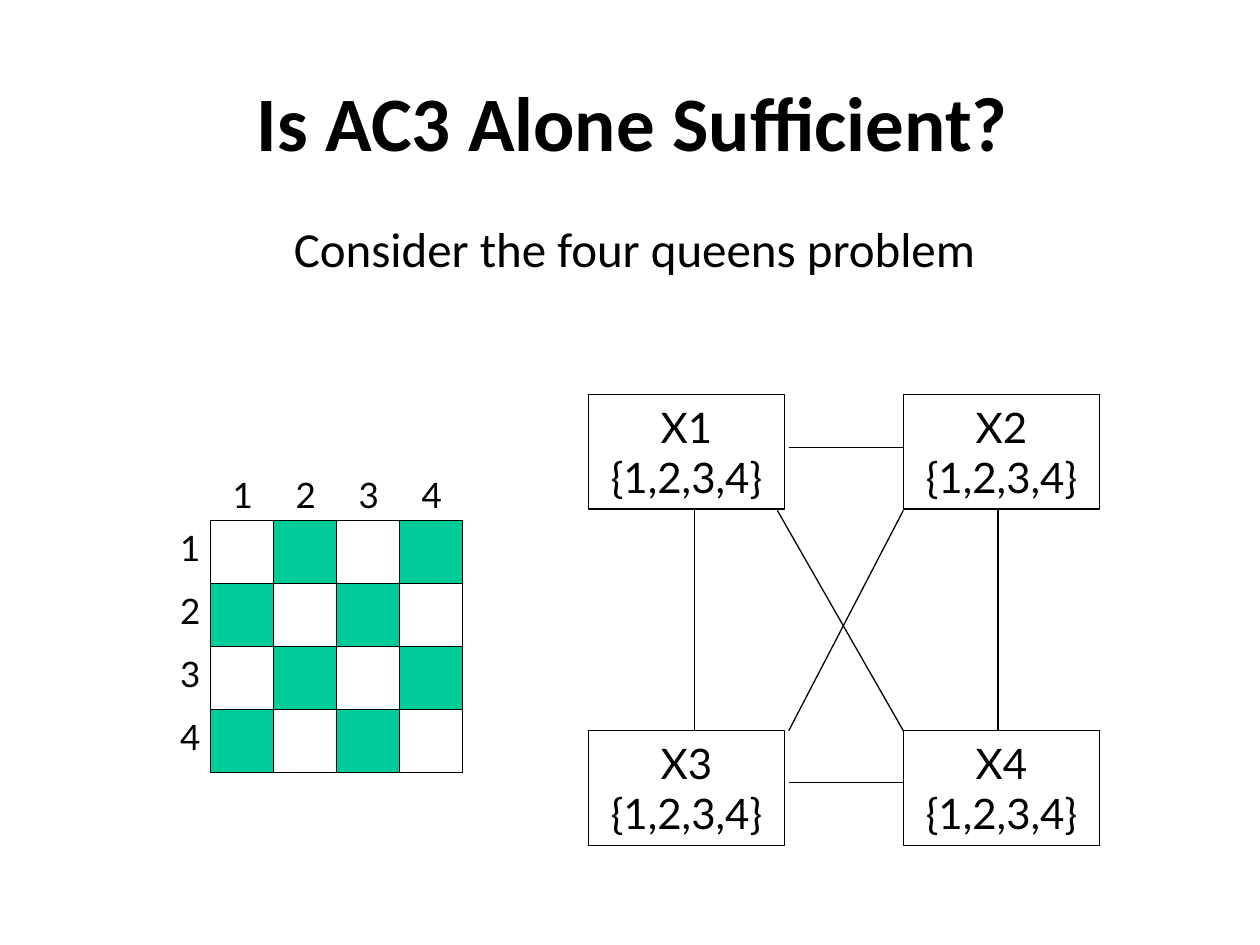
"""Build a slide on arc consistency and the four queens problem."""
from dataclasses import dataclass
from itertools import product

from lxml.etree import SubElement
from pptx import Presentation
from pptx.dml.color import RGBColor
from pptx.enum.shapes import MSO_CONNECTOR as Connector, MSO_SHAPE as Preset
from pptx.enum.text import MSO_ANCHOR as Anchor, MSO_AUTO_SIZE as AutoSize, PP_ALIGN as Align
from pptx.oxml.ns import qn
from pptx.util import Cm, Pt


@dataclass(frozen=True)
class Theme:
    ink: RGBColor = RGBColor(0, 0, 0)
    square: RGBColor = RGBColor(0x00, 0xCC, 0x99)
    heading_font: str = "Calibri"
    diagram_font: str = "Lato"
    title_size: Pt = Pt(44)
    subtitle_size: Pt = Pt(28)
    node_size: Pt = Pt(24)
    label_size: Pt = Pt(20)
    line_width: Pt = Pt(0.75)


THEME = Theme()


def write_lines(shape, lines, font, size, align=Align.CENTER, bold=False):
    frame = shape.text_frame
    for index, line in enumerate(lines):
        paragraph = frame.add_paragraph() if index else frame.paragraphs[0]
        paragraph.alignment = align
        run = paragraph.add_run()
        run.text = line
        run.font.name = font
        run.font.size = size
        run.font.bold = bold
        run.font.color.rgb = THEME.ink


def fit_to_text(shape):
    shape.text_frame.word_wrap = False
    shape.text_frame.auto_size = AutoSize.SHAPE_TO_FIT_TEXT


def add_title(slide, text):
    box = slide.shapes.add_textbox(Cm(1.96), Cm(0.84), Cm(21.59), Cm(3.18))
    box.text_frame.word_wrap = True
    box.text_frame.vertical_anchor = Anchor.MIDDLE
    write_lines(box, [text], THEME.heading_font, THEME.title_size, bold=True)


def add_subtitle(slide, text):
    box = slide.shapes.add_textbox(Cm(5.59), Cm(4.29), Cm(14.4), Cm(1.45))
    fit_to_text(box)
    write_lines(box, [text], THEME.heading_font, THEME.subtitle_size)


def add_box(group, left, top, width, height, color=None):
    shape = group.shapes.add_shape(Preset.RECTANGLE, Cm(left), Cm(top), Cm(width), Cm(height))
    shape.shadow.inherit = False
    if color is None:
        shape.fill.background()
    else:
        shape.fill.solid()
        shape.fill.fore_color.rgb = color
    shape.line.color.rgb = THEME.ink
    shape.line.width = THEME.line_width
    return shape


def add_label(group, left, top, text):
    box = group.shapes.add_textbox(Cm(left), Cm(top), Cm(0.89), Cm(1.09))
    fit_to_text(box)
    write_lines(box, [text], THEME.diagram_font, THEME.label_size, Align.LEFT)


def add_node(group, left, top, name):
    shape = add_box(group, left, top, 3.96, 2.31)
    fit_to_text(shape)
    write_lines(shape, [name, "{1,2,3,4}"], THEME.diagram_font, THEME.node_size)


def add_edge(group, start_x, start_y, end_x, end_y):
    edge = group.shapes.add_connector(
        Connector.STRAIGHT, Cm(start_x), Cm(start_y), Cm(end_x), Cm(end_y))
    edge.line.color.rgb = THEME.ink
    edge.line.width = THEME.line_width
    SubElement(edge.element.spPr, qn("a:effectLst"))


def add_board(slide, left, top, count, cell):
    group = slide.shapes.add_group_shape()
    add_box(group, left, top, count * cell, count * cell)
    for row, column in product(range(count), repeat=2):
        if (row + column) % 2:
            add_box(group, left + column * cell, top + row * cell, cell, cell, THEME.square)
    for index in range(count):
        add_label(group, left - 0.86, top + index * cell, str(index + 1))
        add_label(group, left + 0.2 + index * cell, top - 1.07, str(index + 1))


def add_constraint_graph(slide):
    group = slide.shapes.add_group_shape()
    left, right = 11.86, 18.21
    upper, lower = 7.95, 14.73
    for number, (top, x) in enumerate(product((upper, lower), (left, right)), 1):
        add_node(group, x, top, f"X{number}")
    gap_left, gap_top = 15.9, 10.29
    for y in (9.02, 15.77):
        add_edge(group, gap_left, y, right, y)
    for x in (14, 20.12):
        add_edge(group, x, gap_top, x, lower)
    add_edge(group, 15.67, gap_top, right, lower)
    add_edge(group, right, gap_top, gap_left, lower)


def main():
    presentation = Presentation()
    presentation.slide_width, presentation.slide_height = Cm(25.4), Cm(19.05)
    slide = presentation.slides.add_slide(presentation.slide_layouts[6])
    add_title(slide, "Is AC3 Alone Sufficient?")
    add_board(slide, left=4.24, top=10.49, count=4, cell=1.27)
    add_constraint_graph(slide)
    add_subtitle(slide, "Consider the four queens problem")
    presentation.save("out.pptx")


if __name__ == "__main__":
    main()
